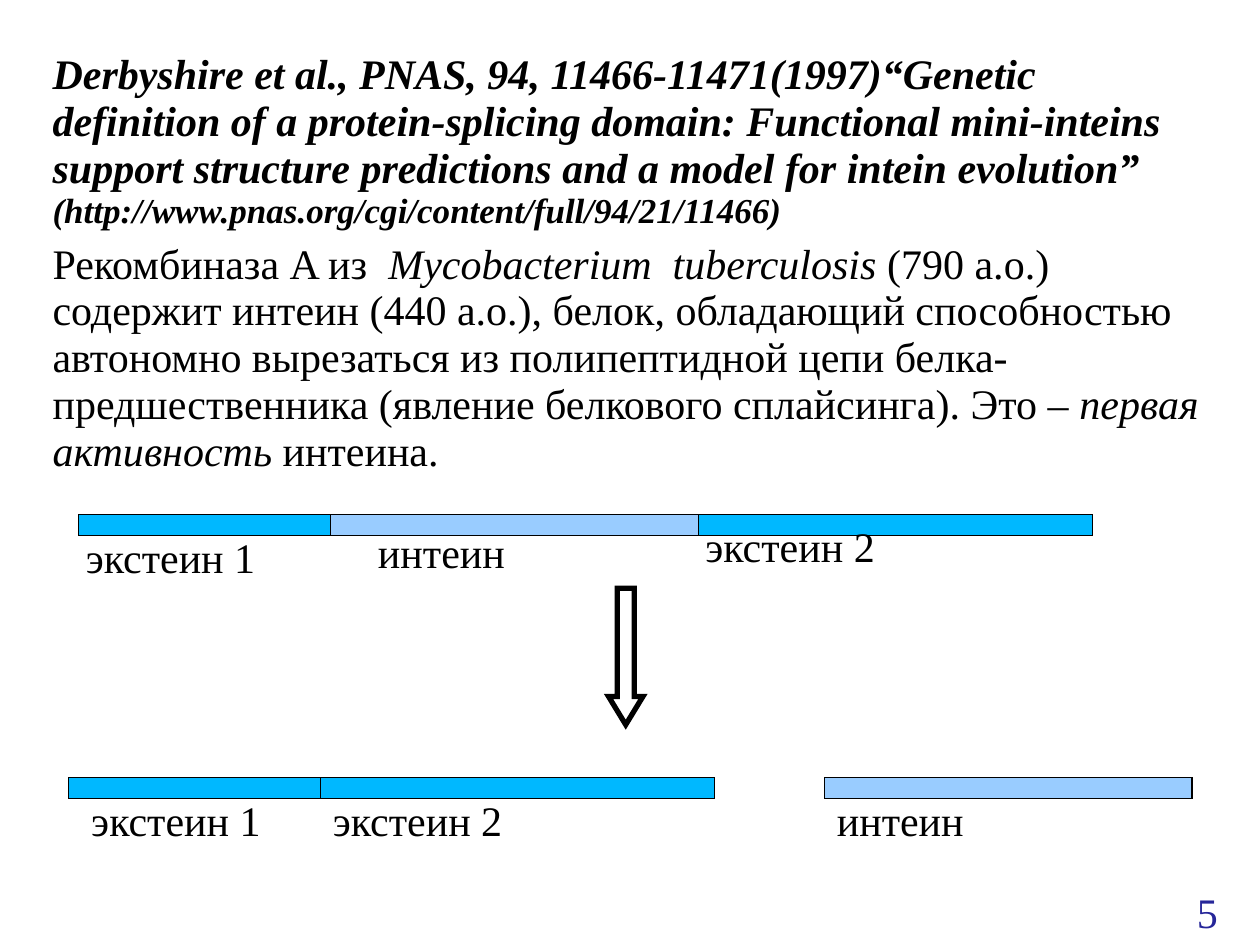
from collections import namedtuple
from dataclasses import dataclass

from lxml import etree
from pptx import Presentation
from pptx.dml import color
from pptx.enum import shapes, text
from pptx.oxml import ns
from pptx.util import Cm, Pt

Box = namedtuple("Box", "x y w h")
Part = namedtuple("Part", "name x w fill dx dy")


@dataclass(frozen=True)
class Theme:
    font: str = "Times New Roman"
    size: int = 24
    small: int = 20
    ink: str = "000000"
    number: str = "262699"
    extein: str = "00B8FF"
    intein: str = "99CCFF"
    spacing: float = 0.93


THEME = Theme()
EXT1, INT, EXT2 = 5.08, 7.41, 7.95  # segment widths


def rgb(code):
    return color.RGBColor.from_string(code)


def style(run, size=THEME.size, ink=THEME.ink, bold=False, italic=False):
    font = run.font
    font.name, font.size = THEME.font, Pt(size)
    font.bold, font.italic = bold, italic
    font.color.rgb = rgb(ink)


def place(shape, box):
    shape.left, shape.top, shape.width, shape.height = map(Cm, box)


def inset(frame, side, edge):
    frame.margin_left = frame.margin_right = Cm(side)
    frame.margin_top = frame.margin_bottom = Cm(edge)


def label(parent, box, words, ink=THEME.ink):
    frame = parent.add_textbox(*map(Cm, box)).text_frame
    inset(frame, 0.25, 0.13)
    frame.word_wrap = True
    frame.text = words
    style(frame.paragraphs[0].runs[0], ink=ink)


def outline(parent, kind, box, width):
    """Add a preset shape with a sharp-cornered line and no shadow."""
    shape = parent.add_shape(kind, *map(Cm, box))
    shape.shadow.inherit = False
    shape.line.color.rgb = rgb(THEME.ink)
    shape.line.width = Pt(width)
    line = shape._element.spPr.find(ns.qn("a:ln"))
    etree.SubElement(line, ns.qn("a:miter"), lim="800000")
    return shape


def title(slide, box, cite, link):
    shape = slide.shapes.title
    place(shape, box)
    frame = shape.text_frame
    inset(frame, 0, 0)
    frame.word_wrap = True
    frame.auto_size = text.MSO_AUTO_SIZE.NONE
    frame.vertical_anchor = text.MSO_ANCHOR.MIDDLE
    frame.text = cite + "\v" + link
    para = frame.paragraphs[0]
    para.alignment = text.PP_ALIGN.LEFT
    para.line_spacing = THEME.spacing
    for run, size in zip(para.runs, (THEME.size, THEME.small)):
        style(run, size, bold=True, italic=True)
    # The line break needs its own size, or it takes the layout's larger one
    gap = para._p.find(ns.qn("a:br"))
    etree.SubElement(gap, ns.qn("a:rPr"), sz=str(THEME.size * 100))


def body(slide, box, pieces):
    """Write pieces as one paragraph, every second one in italics."""
    frame = slide.shapes.add_textbox(*map(Cm, box)).text_frame
    inset(frame, 0, 0)
    frame.word_wrap = True
    para = frame.paragraphs[0]
    para.line_spacing = THEME.spacing
    for i, words in enumerate(pieces):
        run = para.add_run()
        run.text = words
        style(run, italic=i % 2 == 1)


def protein(slide, box, parts):
    """Draw segments along a bar, with captions offset from their left ends."""
    group = slide.shapes.add_group_shape().shapes
    for part in parts:
        spot = Box(box.x + part.x, box.y, part.w, box.h)
        bar = outline(group, shapes.MSO_SHAPE.RECTANGLE, spot, 0.75)
        bar.fill.solid()
        bar.fill.fore_color.rgb = rgb(part.fill)
    for part in parts:
        wide = 3.5 if part.name == "интеин" else 4.24
        spot = Box(box.x + part.x + part.dx, box.y + part.dy, wide, 1.27)
        label(group, spot, part.name)


def arrow(slide, box):
    shape = outline(slide.shapes, shapes.MSO_SHAPE.DOWN_ARROW, box, 3)
    shape.fill.background()
    shape.adjustments[0] = 0.5
    shape.adjustments[1] = 0.82


def main():
    deck = Presentation()
    deck.slide_width, deck.slide_height = Cm(25.4), Cm(19.05)
    slide = deck.slides.add_slide(deck.slide_layouts[5])

    title(
        slide, Box(1.06, 0, 23.06, 5.72),
        "Derbyshire et al., PNAS, 94, 11466-11471(1997)“Genetic definition "
        "of a protein-splicing domain: Functional mini-inteins support "
        "structure predictions and a model for intein evolution”",
        "(http://www.pnas.org/cgi/content/full/94/21/11466)",
    )
    body(slide, Box(1.06, 4.87, 23.7, 4.72), (
        "Рекомбиназа A из  ",
        "Mycobacterium  tuberculosis ",
        "(790 а.о.) содержит интеин (440 а.о.), белок, обладающий "
        "способностью автономно вырезаться из полипептидной цепи "
        "белка-предшественника (явление белкового сплайсинга). Это – ",
        "первая активность ",
        "интеина.",
    ))
    protein(slide, Box(1.59, 10.37, EXT1 + INT + EXT2, 0.43), (
        Part("экстеин 1", 0, EXT1, THEME.extein, -0.11, 0.21),
        Part("интеин", EXT1, INT, THEME.intein, 0.7, 0.12),
        Part("экстеин 2", EXT1 + INT, EXT2, THEME.extein, -0.11, 0),
    ))
    arrow(slide, Box(12.27, 11.86, 0.69, 2.75))
    protein(slide, Box(1.38, 15.67, 22.65, 0.43), (
        Part("экстеин 1", 0, EXT1, THEME.extein, 0.21, 0.21),
        Part("экстеин 2", EXT1, EXT2, THEME.extein, 0, 0.21),
        Part("интеин", 22.65 - INT, INT, THEME.intein, 0, 0.21),
    ))
    label(slide.shapes, Box(23.88, 17.75, 1.52, 1.3), "5", THEME.number)
    deck.save("out.pptx")


if __name__ == "__main__":
    main()
